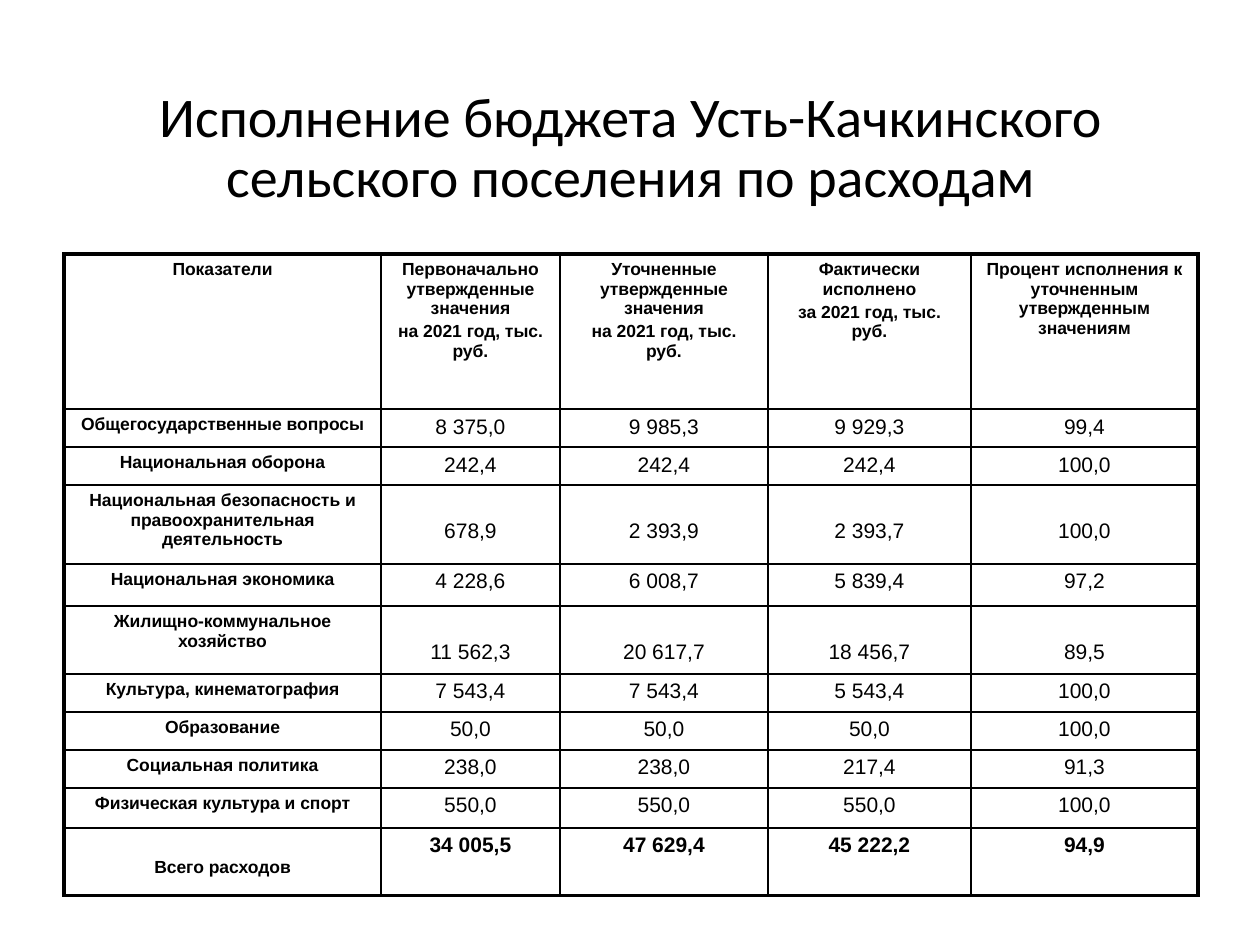
from pptx import Presentation
from pptx import util as u
from pptx.dml.color import RGBColor
from pptx.enum import text
from pptx.oxml.xmlchemy import OxmlElement

BLACK = "000000"
COLUMNS = [317, 179, 208, 203, 227]
HEIGHTS = [155, 38, 38, 79, 42, 68, 38, 38, 38, 40, 68]
HEADINGS = [
    "Показатели",
    "Первоначально утвержденные значения\nна 2021 год, тыс. руб.",
    "Уточненные утвержденные значения\nна 2021 год, тыс. руб.",
    "Фактически исполнено\nза 2021 год, тыс. руб.",
    "Процент исполнения к уточненным утвержденным значениям",
]
EXPENSES = [
    ["Общегосударственные вопросы", "8 375,0", "9 985,3", "9 929,3", "99,4"],
    ["Национальная оборона", "242,4", "242,4", "242,4", "100,0"],
    ["Национальная безопасность и правоохранительная деятельность",
     "678,9", "2 393,9", "2 393,7", "100,0"],
    ["Национальная экономика", "4 228,6", "6 008,7", "5 839,4", "97,2"],
    ["Жилищно-коммунальное хозяйство", "11 562,3", "20 617,7", "18 456,7", "89,5"],
    ["Культура, кинематография", "7 543,4", "7 543,4", "5 543,4", "100,0"],
    ["Образование", "50,0", "50,0", "50,0", "100,0"],
    ["Социальная политика", "238,0", "238,0", "217,4", "91,3"],
    ["Физическая культура и спорт", "550,0", "550,0", "550,0", "100,0"],
]
TOTAL = ["Всего расходов", "34 005,5", "47 629,4", "45 222,2", "94,9"]
LOWERED_VALUES = {3, 5}


def px(length):
    """Turn px into EMU at 126 px to the inch."""
    return u.Emu(round(length * 914400 / 126))


def color(code):
    """Turn a hex string into a colour."""
    return RGBColor.from_string(code)


def write(frame, content, font="Arial", size=10, bold=False, fill=BLACK,
          before=0.2, spacing=None):
    """Fill a text frame with one centred paragraph per line of content."""
    for index, line in enumerate(content.split("\n")):
        paragraph = frame.add_paragraph() if index else frame.paragraphs[0]
        paragraph.alignment = text.PP_ALIGN.CENTER
        paragraph.space_before = u.Pt(size * before)
        paragraph.line_spacing = spacing
        run = paragraph.add_run()
        run.text = line
        run.font.name = font
        run.font.size = u.Pt(size)
        run.font.bold = bold
        run.font.color.rgb = color(fill)


class Report:
    """Hold the style and the current slide."""

    thin, thick = 1, 2.25
    inset = 6

    def __init__(self, deck):
        """Add a title-only slide to the deck."""
        self.slide = deck.slides.add_slide(deck.slide_layouts[5])

    def title(self, content, left, top, width, height):
        """Place and write the title."""
        heading = self.slide.shapes.title
        heading.left, heading.top = px(left), px(top)
        heading.width, heading.height = px(width), px(height)
        frame = heading.text_frame
        frame.word_wrap = True
        frame.auto_size = text.MSO_AUTO_SIZE.NONE
        frame.vertical_anchor = text.MSO_ANCHOR.MIDDLE
        write(frame, content, font="Calibri", size=32, before=0, spacing=0.9)

    def border(self, cell, side, width):
        """Draw one side of a cell."""
        line = OxmlElement(f"a:ln{side}")
        line.set("w", str(u.Pt(width)))
        fill = OxmlElement("a:solidFill")
        ink = OxmlElement("a:srgbClr")
        ink.set("val", BLACK)
        fill.append(ink)
        line.append(fill)
        cell._tc.get_or_add_tcPr().append(line)

    def table(self, rows, left, top):
        """Build the budget table with a thick outer frame."""
        last_row, last_column = len(HEIGHTS) - 1, len(COLUMNS) - 1
        budget = self.slide.shapes.add_table(
            len(HEIGHTS), len(COLUMNS), px(left), px(top),
            px(sum(COLUMNS)), px(sum(HEIGHTS))).table
        budget.first_row = budget.horz_banding = False
        for column, width in zip(budget.columns, COLUMNS):
            column.width = px(width)
        for row, height in zip(budget.rows, HEIGHTS):
            row.height = px(height)
        for r, entries in enumerate(rows):
            for c, content in enumerate(entries):
                cell = budget.cell(r, c)
                outer = {"L": c == 0, "R": c == last_column,
                         "T": r == 0, "B": r == last_row}
                for side, is_outer in outer.items():
                    self.border(cell, side, self.thick if is_outer else self.thin)
                cell.fill.background()
                is_label = r == 0 or c == 0
                lowered = r == last_row if c == 0 else r in LOWERED_VALUES
                size = 10 if is_label else 12
                drop = size * 2.4 if lowered else 0
                cell.margin_top = px(self.inset + drop)
                cell.margin_bottom = px(self.inset)
                write(cell.text_frame, content, size=size,
                      bold=is_label or r == last_row)


def main():
    """Build and save the slide."""
    deck = Presentation()
    deck.slide_width, deck.slide_height = px(1260), px(945)
    report = Report(deck)
    report.title("Исполнение бюджета Усть-Качкинского сельского поселения по расходам",
                 64, 55, 1134, 189)
    report.table([HEADINGS, *EXPENSES, TOTAL], 64, 254)
    deck.save("out.pptx")


if __name__ == "__main__":
    main()
